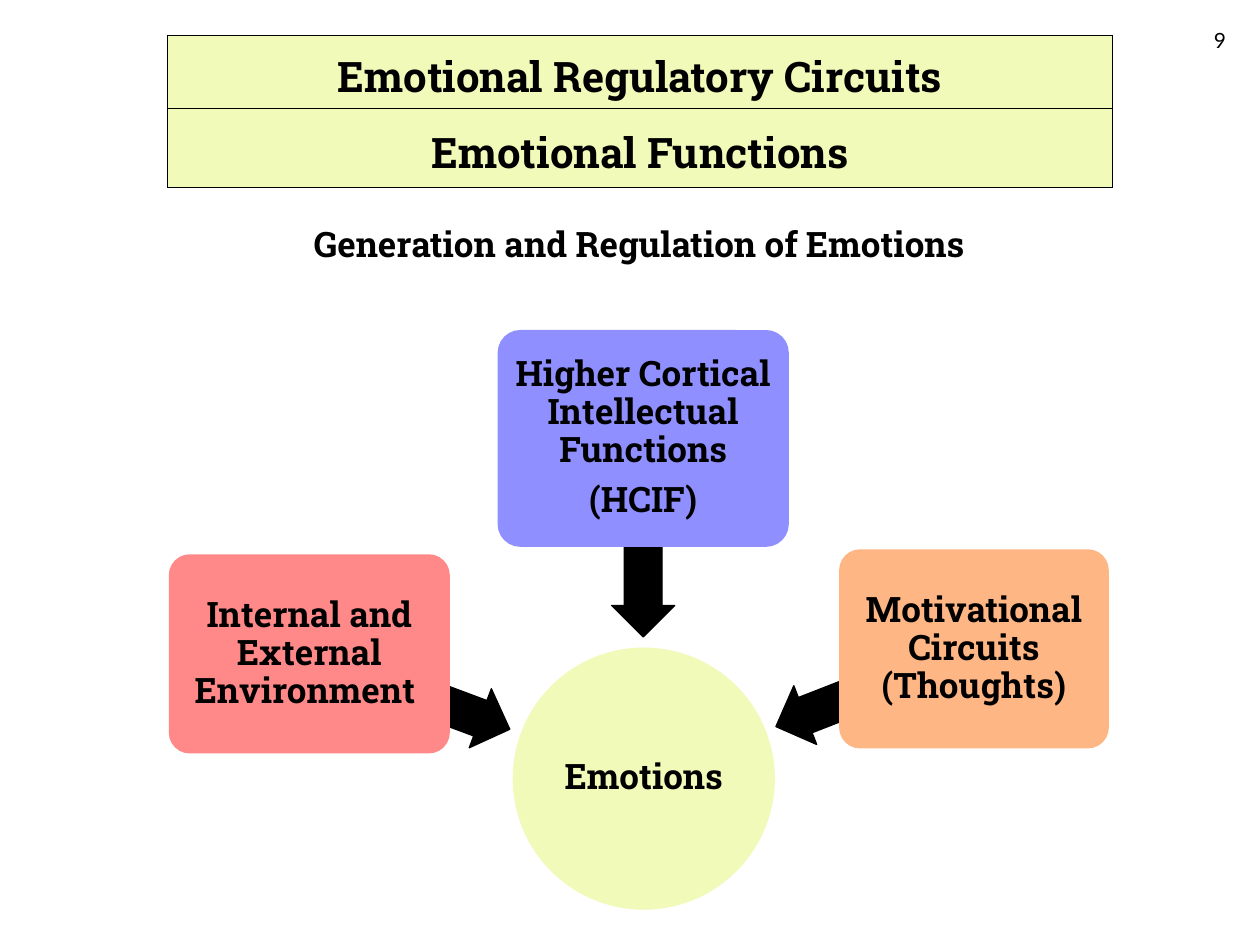
from lxml.etree import SubElement
from pptx import Presentation
from pptx.dml.color import RGBColor
from pptx.enum.shapes import MSO_SHAPE
from pptx.enum.text import MSO_ANCHOR, PP_ALIGN
from pptx.oxml.ns import qn
from pptx.util import Inches, Pt

BLACK = RGBColor(0x00, 0x00, 0x00)
LIME = RGBColor(0xF1, 0xFA, 0xB8)
RED = RGBColor(0xFF, 0x89, 0x89)
BLUE = RGBColor(0x8F, 0x8F, 0xFF)
ORANGE = RGBColor(0xFF, 0xB6, 0x85)
HEADING_FONT = "Roboto Slab"
NUMBER_FONT = "Lato"

TITLE_ROWS = [("Emotional Regulatory Circuits", 0.58), ("Emotional Functions", 0.63)]
SUBTITLE = "Generation and Regulation of Emotions"
PAGE_NUMBER = "9"
RESULT = (["Emotions"], LIME, (4.08, 5.15, 2.06, 2.06))
SOURCES = [
    (["Internal and External Environment "], RED, (1.35, 4.41, 2.21, 1.56), (2.4, 5.24, 1.7, 0.5), 200.5),
    (["Higher Cortical Intellectual Functions", "(HCIF)"], BLUE, (3.96, 2.63, 2.29, 1.7), (4.32, 4.02, 1.57, 0.5), 270),
    (["Motivational Circuits (Thoughts)"], ORANGE, (6.67, 4.37, 2.12, 1.56), (6.1, 5.21, 1.69, 0.5), 338.7),
]


def style(paragraph, size, align=PP_ALIGN.CENTER, name=HEADING_FONT, bold=True):
    paragraph.alignment = align
    paragraph.font.size = Pt(size)
    paragraph.font.name = name
    paragraph.font.bold = bold
    paragraph.font.color.rgb = BLACK


def add_figure(page, kind, place, color, line_width, adjustments=()):
    figure = page.shapes.add_shape(kind, *map(Inches, place))
    figure.shadow.inherit = False
    figure.fill.solid()
    figure.fill.fore_color.rgb = color
    figure.line.color.rgb = color
    figure.line.width = Pt(line_width)
    for index, value in enumerate(adjustments):
        figure.adjustments[index] = value
    return figure


def write_label(figure, lines, inset):
    frame = figure.text_frame
    frame.word_wrap = True
    frame.vertical_anchor = MSO_ANCHOR.MIDDLE
    frame.margin_left = frame.margin_right = Inches(inset)
    frame.margin_top = frame.margin_bottom = Inches(inset)
    for index, line in enumerate(lines):
        paragraph = frame.add_paragraph() if index else frame.paragraphs[0]
        paragraph.text = line
        paragraph.line_spacing = 0.9
        paragraph.space_after = Pt(7)
        style(paragraph, 20)


def add_text(page, text, place, wrap, *styling):
    box = page.shapes.add_textbox(*map(Inches, place))
    box.text_frame.word_wrap = wrap
    paragraph = box.text_frame.paragraphs[0]
    paragraph.text = text
    style(paragraph, *styling)


def border_cell(cell):
    properties = cell._tc.get_or_add_tcPr()
    for position, side in enumerate(("lnL", "lnR", "lnT", "lnB")):
        line = SubElement(properties, qn(f"a:{side}"), w=str(Pt(1)))
        fill = SubElement(line, qn("a:solidFill"))
        SubElement(fill, qn("a:srgbClr"), val=str(BLACK))
        properties.insert(position, line)


def add_title_table(page):
    height = sum(row_height for _, row_height in TITLE_ROWS)
    table = page.shapes.add_table(
        len(TITLE_ROWS), 1, Inches(1.33), Inches(0.28), Inches(7.5), Inches(height)
    ).table
    table.first_row = table.horz_banding = False
    for index, (text, row_height) in enumerate(TITLE_ROWS):
        table.rows[index].height = Inches(row_height)
        cell = table.cell(index, 0)
        cell.fill.solid()
        cell.fill.fore_color.rgb = LIME
        border_cell(cell)
        cell.vertical_anchor = MSO_ANCHOR.MIDDLE
        cell.margin_left = cell.margin_right = Inches(0.07)
        cell.margin_top = cell.margin_bottom = 0
        paragraph = cell.text_frame.paragraphs[0]
        paragraph.text = text
        paragraph.line_spacing = 1.15
        style(paragraph, 24)


def main():
    deck = Presentation()
    deck.slide_width, deck.slide_height = Inches(10), Inches(7.5)
    page = deck.slides.add_slide(deck.slide_layouts[6])

    add_text(page, SUBTITLE, (1.58, 1.72, 6.99, 0.47), False, 20)
    lines, color, place = RESULT
    write_label(add_figure(page, MSO_SHAPE.OVAL, place, color, 1.5), lines, 0.01)
    for lines, color, place, arrow_place, angle in SOURCES:
        arrow = add_figure(page, MSO_SHAPE.LEFT_ARROW, arrow_place, BLACK, 0.75, (0.6, 0.5))
        arrow.rotation = angle
        box = add_figure(page, MSO_SHAPE.ROUNDED_RECTANGLE, place, color, 1.5, (0.1,))
        write_label(box, lines, 0.04)
    add_title_table(page)
    add_text(page, PAGE_NUMBER, (9, 0.17, 0.83, 0.27), True, 12, PP_ALIGN.RIGHT, NUMBER_FONT, False)

    deck.save("out.pptx")


if __name__ == "__main__":
    main()
